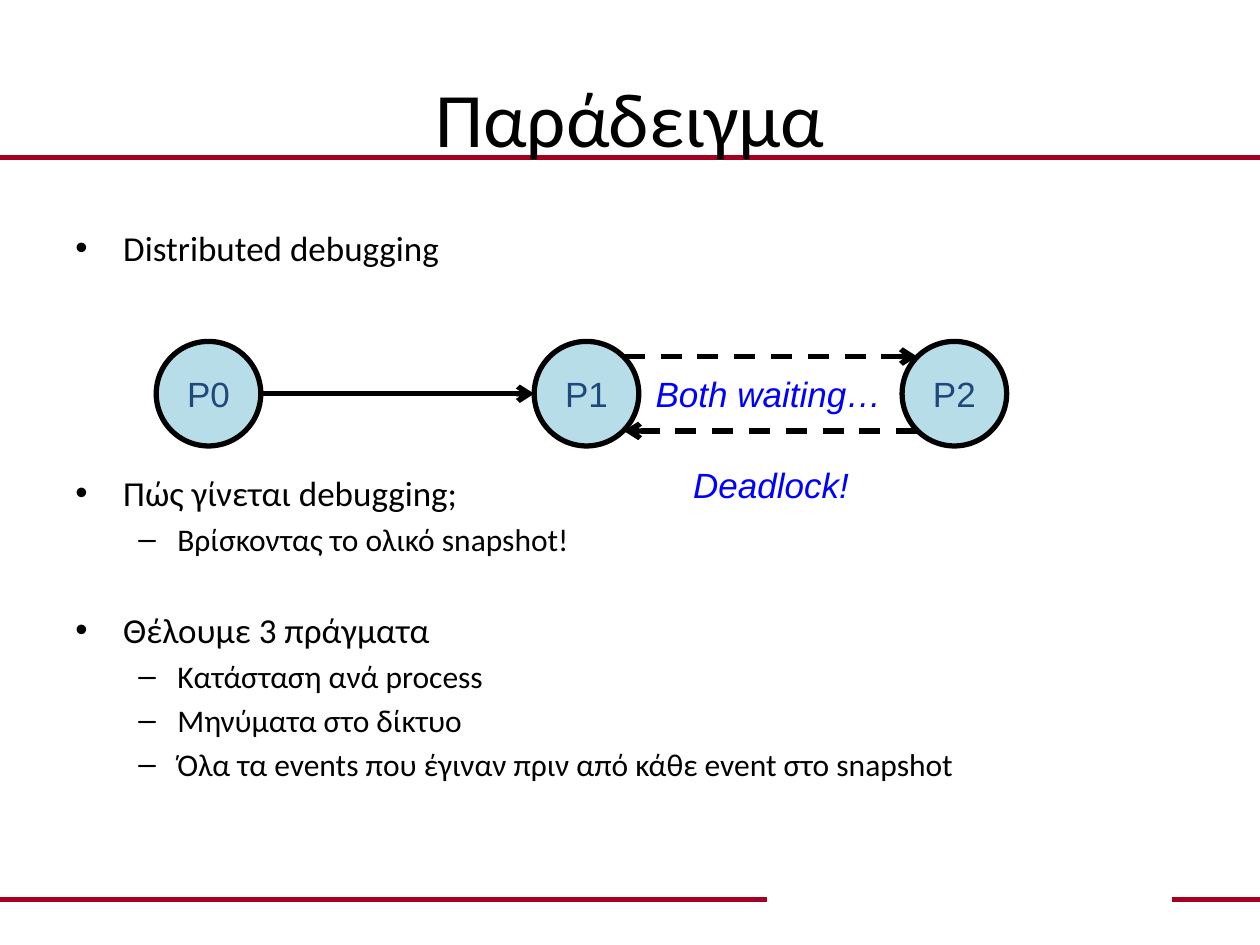
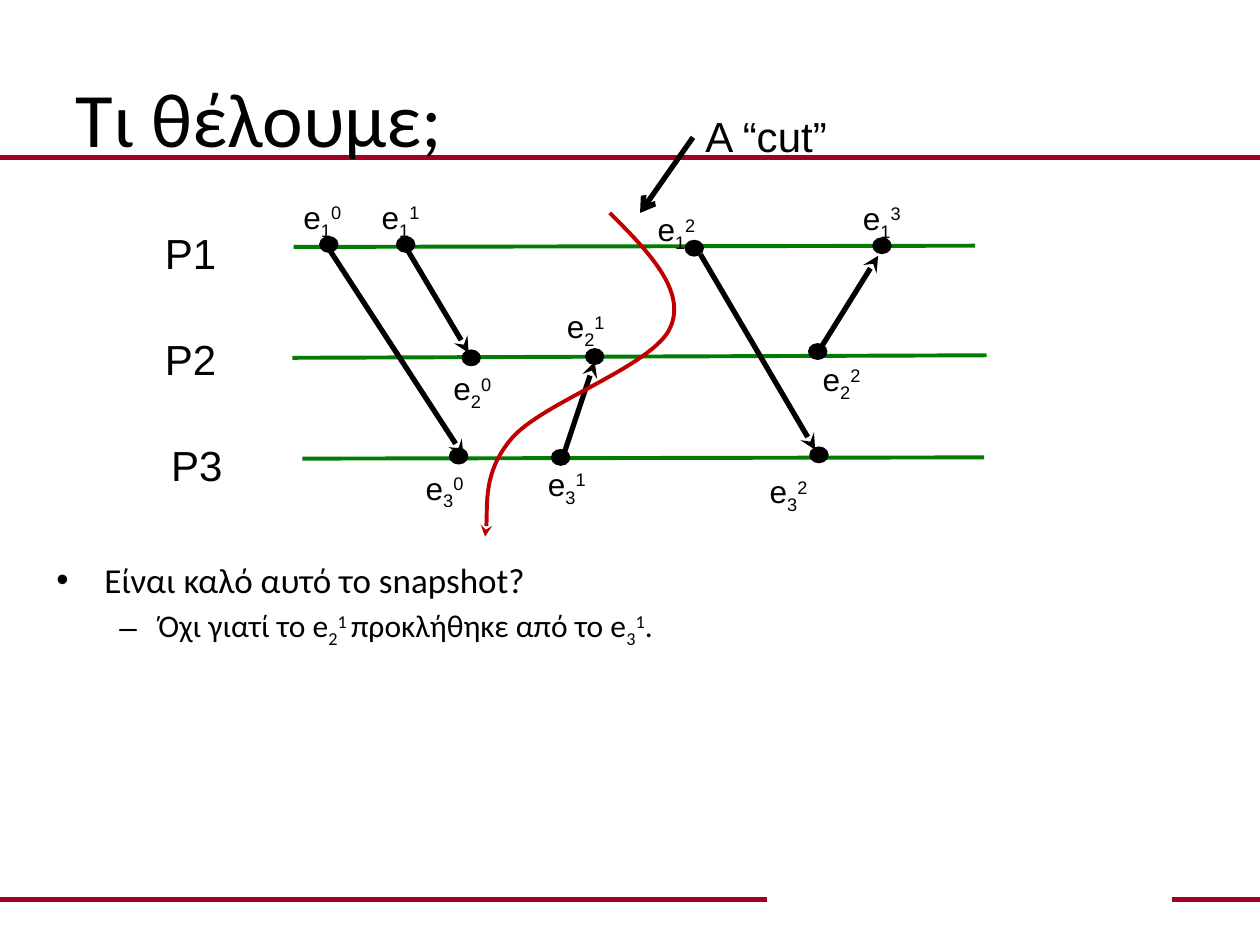
from lxml import etree
from pptx import Presentation
from pptx.dml.color import RGBColor
from pptx.enum.dml import MSO_LINE
from pptx.enum.shapes import MSO_CONNECTOR, MSO_SHAPE
from pptx.enum.text import MSO_ANCHOR, PP_ALIGN
from pptx.oxml.ns import qn
from pptx.util import Inches, Pt

STRAIGHT = MSO_CONNECTOR.STRAIGHT
OVAL = MSO_SHAPE.OVAL
DASH = MSO_LINE.DASH
MIDDLE = MSO_ANCHOR.MIDDLE
LEFT, CENTER = PP_ALIGN.LEFT, PP_ALIGN.CENTER

BLACK, BAND, NODE, NODE_TEXT = "000000", "A50021", "B7DEE8", "1F497D"
NOTE, TIMELINE, CUT = "0000FF", "037C03", "C00000"
HEAD_FONT, LABEL_FONT = "Calibri", "Arial"
SUB, SUP = -25000, 30000
BANDS = [((9.3, 7.14), (10, 7.14)), ((0, 7.14), (6.09, 7.14)), ((0, 1.25), (10, 1.25))]
# Per outline level: bullet, left margin, hanging indent, size, space before
LEVELS = [("•", 0.38, -0.38, 20, 4), ("–", 0.81, -0.31, 18, 3.6)]
DOT_W, DOT_H = 0.14, 0.12


def rgb(color):
    return RGBColor.from_string(color)


def write(p, text, size=18, font=LABEL_FONT, color=BLACK, italic=False, align=LEFT):
    """Fill a paragraph with a string or with (text, baseline) pairs."""
    p.alignment = align
    for part, baseline in [(text, 0)] if isinstance(text, str) else text:
        r = p.add_run()
        r.text = part
        r.font.size, r.font.name, r.font.italic = Pt(size), font, italic
        r.font.color.rgb = rgb(color)
        if baseline:
            r.font._element.set("baseline", str(baseline))


def event(process, index, tail=""):
    """Parts of an event name such as e with a lower and an upper index."""
    return [("e", 0), (str(process), SUB), (f"{index}{tail}", SUP)]


def add_text(s, x, y, w, h, text, wrap=True, **fmt):
    tf = s.shapes.add_textbox(Inches(x), Inches(y), Inches(w), Inches(h)).text_frame
    tf.word_wrap = wrap
    write(tf.paragraphs[0], text, **fmt)


def add_bullets(s, x, y, w, h, items):
    """Add an outline from (level, text, space before or None) items."""
    tf = s.shapes.add_textbox(Inches(x), Inches(y), Inches(w), Inches(h)).text_frame
    tf.word_wrap = True
    for i, (level, text, gap) in enumerate(items):
        bullet, margin, indent, size, space = LEVELS[level]
        p = tf.add_paragraph() if i else tf.paragraphs[0]
        pPr = p._p.get_or_add_pPr()
        pPr.set("marL", str(Inches(margin)))
        pPr.set("indent", str(Inches(indent)))
        etree.SubElement(pPr, qn("a:buFont")).set("typeface", LABEL_FONT)
        etree.SubElement(pPr, qn("a:buChar")).set("char", bullet)
        p.level = level
        p.space_before = Pt((gap or space) if i else 0)
        write(p, text, size=size, font=HEAD_FONT)


def style_line(line, color, width, head=None, dash=None):
    line.color.rgb = rgb(color)
    line.width = Pt(width)
    if dash:
        line.dash_style = dash
    if head:
        etree.SubElement(line._get_or_add_ln(), qn("a:tailEnd")).set("type", head)


def add_line(s, start, end, color=BLACK, width=3, **fmt):
    c = s.shapes.add_connector(STRAIGHT, *(Inches(v) for v in (*start, *end)))
    style_line(c.line, color, width, **fmt)
    etree.SubElement(c._element.spPr, qn("a:effectLst"))


def add_oval(s, x, y, w, h, fill, width):
    sp = s.shapes.add_shape(OVAL, Inches(x), Inches(y), Inches(w), Inches(h))
    sp.shadow.inherit = False
    sp.fill.solid()
    sp.fill.fore_color.rgb = rgb(fill)
    style_line(sp.line, BLACK, width)
    return sp


def add_node(s, x, y, size, name):
    tf = add_oval(s, x, y, size, size, NODE, 3).text_frame
    tf.vertical_anchor = MIDDLE
    write(tf.paragraphs[0], name, size=20, color=NODE_TEXT, align=CENTER)


def add_curve(s, points, color, width, head):
    """Draw cubic curves: a start point, then three points for each curve."""
    pts = [(Inches(x), Inches(y)) for x, y in points]
    builder = s.shapes.build_freeform(*pts[0])
    builder.add_line_segments(pts[1:], close=False)
    sp = builder.convert_to_shape()
    sp.shadow.inherit = False
    sp.fill.background()
    style_line(sp.line, color, width, head)
    outline = sp._element.find(".//" + qn("a:path"))
    segments = outline.findall(qn("a:lnTo"))
    for i in range(0, len(segments), 3):
        curve = etree.SubElement(outline, qn("a:cubicBezTo"))
        for segment in segments[i:i + 3]:
            curve.append(segment[0])
            outline.remove(segment)


def add_slide(prs, title, align):
    s = prs.slides.add_slide(prs.slide_layouts[5])
    for start, end in BANDS:
        add_line(s, start, end, BAND)
    sp = s.shapes.title
    sp.left, sp.top, sp.width, sp.height = (Inches(v) for v in (0.5, 0.3, 9, 1.25))
    sp.text_frame.vertical_anchor = MIDDLE
    write(sp.text_frame.paragraphs[0], title, size=44, font=HEAD_FONT, align=align)
    s.shapes._spTree.append(sp._element)  # title in front of the bands
    return s


def build_example(prs):
    s = add_slide(prs, "Παράδειγμα", CENTER)
    add_bullets(s, 0.5, 1.75, 9, 4.95, [
        (0, "Distributed debugging", None),
        (0, "Πώς γίνεται debugging;", 116),
        (1, "Βρίσκοντας το ολικό snapshot!", None),
        (0, "Θέλουμε 3 πράγματα", 29),
        (1, "Κατάσταση ανά process", None),
        (1, "Μηνύματα στο δίκτυο", None),
        (1, "Όλα τα events που έγιναν πριν από κάθε event στο snapshot", None),
    ])
    top, size = 2.71, 0.83
    p0, p1, p2 = lefts = (1.24, 4.24, 7.16)
    for i, x in enumerate(lefts):
        add_node(s, x, top, size, f"P{i}")
    middle = top + size / 2
    add_line(s, (p0 + size, middle), (p1, middle), head="arrow")
    inset = 0.12  # from the node's box to its diagonal points
    right, left = p1 + size - inset, p2 + inset
    upper, lower = top + inset, top + size - inset
    add_line(s, (right, upper), (left, upper), head="arrow", dash=DASH)
    add_line(s, (left, lower), (right, lower), head="arrow", dash=DASH)
    for x, y, note in [(4.83, 3.63, "Deadlock!"), (4.81, 2.91, "Both waiting…")]:
        add_text(s, x, y, 2.58, 0.44, note, size=20, color=NOTE, italic=True, align=CENTER)


def build_cut(prs):
    s = add_slide(prs, "Τι θέλουμε;", LEFT)
    add_bullets(s, 0.35, 4.38, 9, 2.56, [
        (0, "Είναι καλό αυτό το snapshot?", None),
        (1, [("Όχι γιατί το ", 0), *event(2, 1, " "), ("προκλήθηκε από το ", 0),
             *event(3, 1), (".", 0)], None),
    ])
    timelines = [
        ("P1", (1.21, 1.76), (2.33, 1.96), (7.74, 1.95)),
        ("P2", (1.21, 2.6), (2.32, 2.84), (7.83, 2.82)),
        ("P3", (1.26, 3.44), (2.4, 3.64), (7.81, 3.63)),
    ]
    for name, label_at, start, end in timelines:
        add_line(s, start, end, TIMELINE, 2.25)
        add_text(s, *label_at, 1.26, 0.5, name, size=24)
    messages = [
        ((2.62, 1.99), (3.68, 3.62)), ((3.22, 1.96), (3.72, 2.8)),
        ((4.47, 3.62), (4.72, 2.87)), ((6.49, 2.8), (6.97, 2.03)),
        ((5.56, 2.02), (6.47, 3.57)),
    ]
    for start, end in messages:
        add_line(s, start, end, head="stealth")
    # (process, index): dot corner, label corner
    events = {
        (1, 0): ((2.54, 1.88), (2.31, 1.52)),
        (1, 1): ((3.15, 1.88), (2.93, 1.52)),
        (1, 2): ((5.44, 1.91), (5.12, 1.62)),
        (1, 3): ((6.93, 1.89), (6.75, 1.53)),
        (2, 0): ((3.67, 2.78), (3.5, 2.88)),
        (2, 1): ((4.65, 2.77), (4.4, 2.39)),
        (2, 2): ((6.42, 2.73), (6.43, 2.81)),
        (3, 0): ((3.57, 3.56), (3.28, 3.67)),
        (3, 1): ((4.38, 3.57), (4.25, 3.64)),
        (3, 2): ((6.43, 3.55), (6.01, 3.7)),
    }
    for key, (dot_at, label_at) in events.items():
        add_oval(s, *dot_at, DOT_W, DOT_H, BLACK, 1)
        add_text(s, *label_at, 0.61, 0.4, event(*key))
    add_text(s, 5.5, 0.83, 1.19, 0.5, "A “cut”", wrap=False, size=24)
    add_line(s, (5.5, 1.09), (5.08, 1.69), head="arrow")
    add_curve(s, [
        (4.84, 1.69), (5.15, 2), (5.45, 2.31), (5.32, 2.6), (5.19, 2.9),
        (4.32, 3.19), (4.07, 3.47), (3.83, 3.74), (3.88, 4.13), (3.85, 4.26),
    ], CUT, 2.25, "stealth")


def main():
    prs = Presentation()
    prs.slide_width, prs.slide_height = Inches(10), Inches(7.5)
    build_example(prs)
    build_cut(prs)
    prs.save("out.pptx")


if __name__ == "__main__":
    main()
